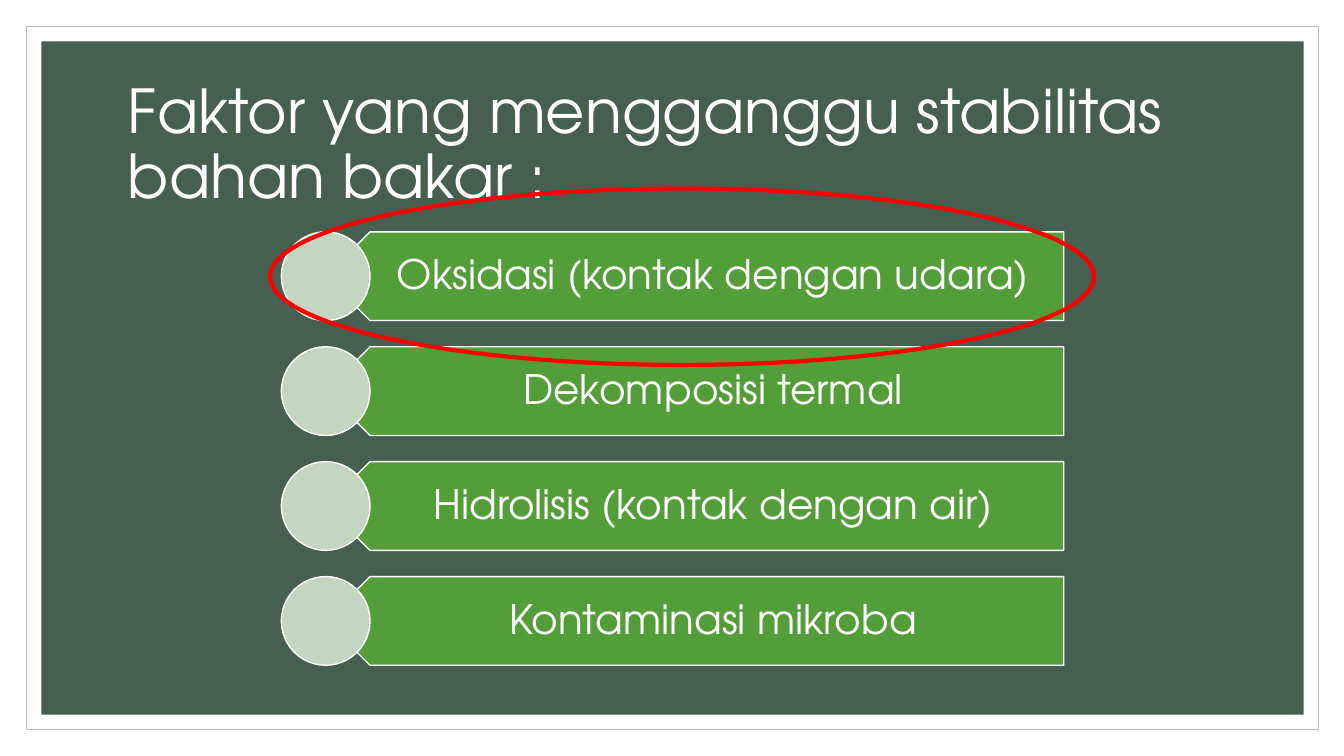
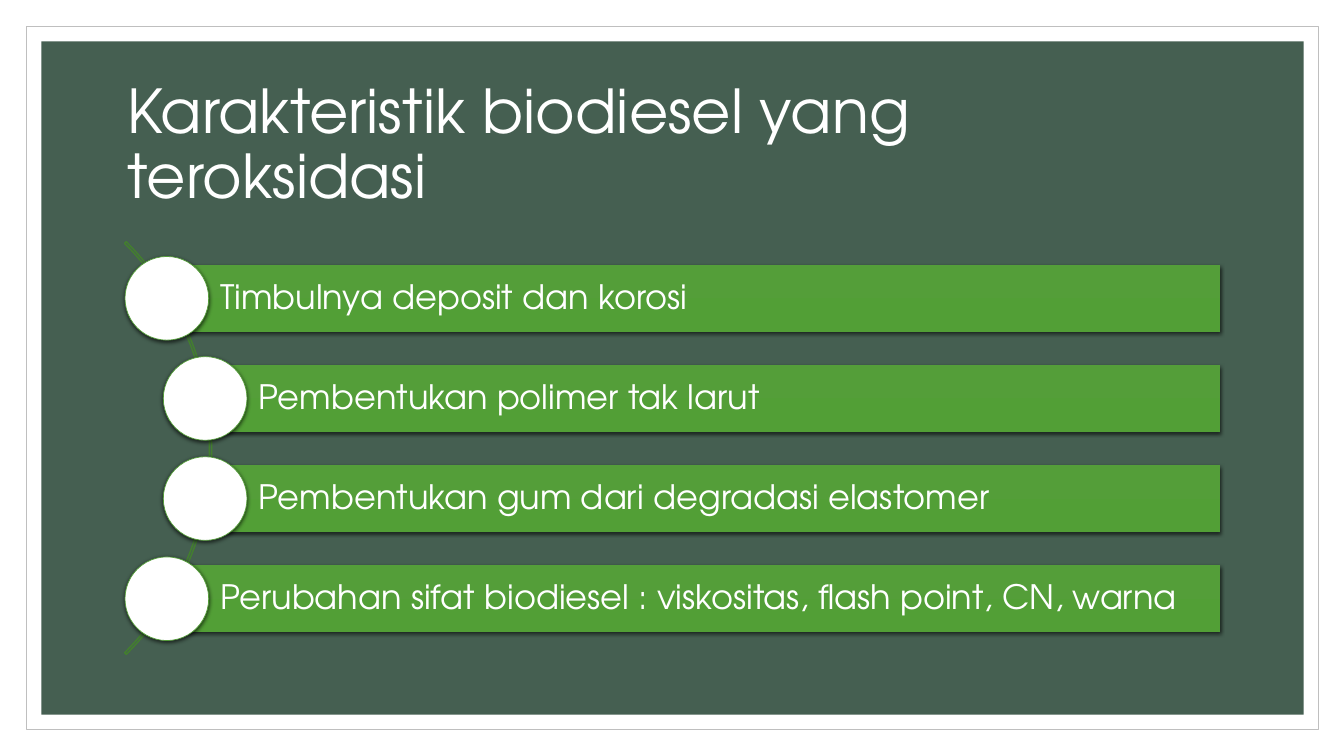
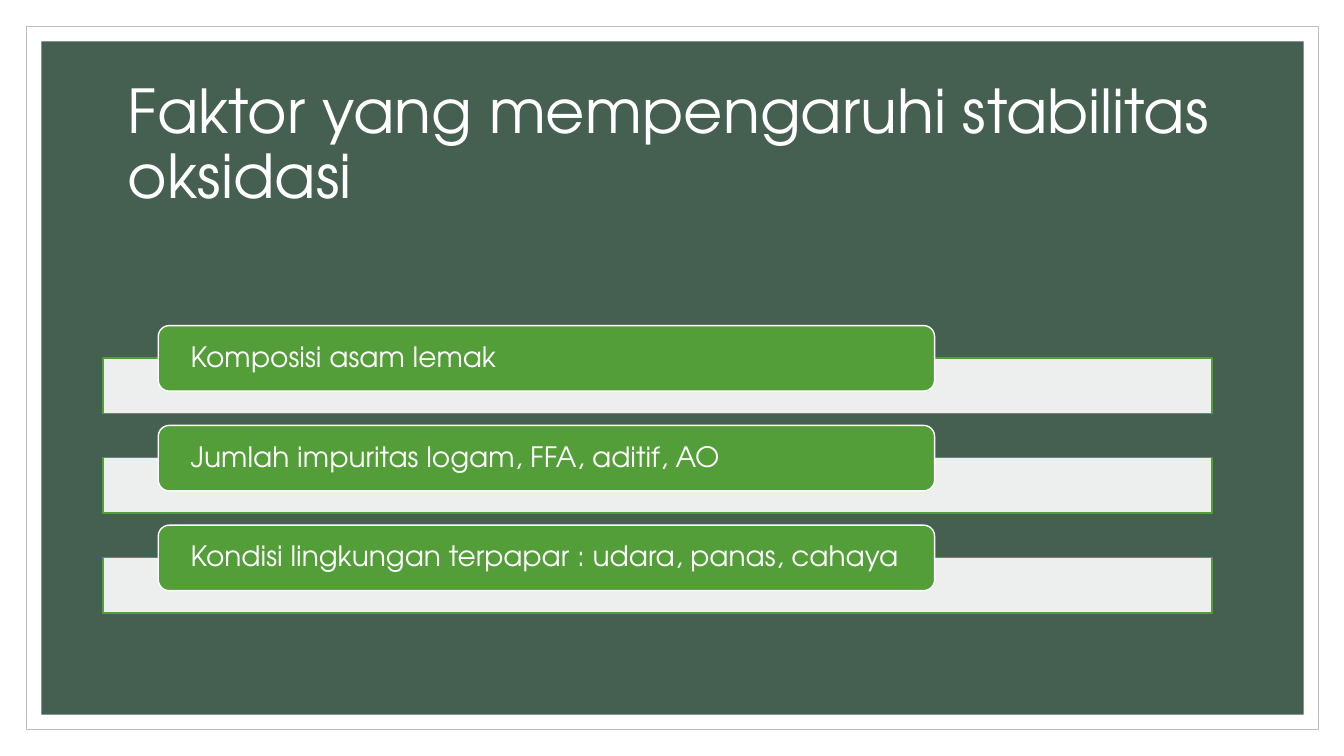
"""Build three slides on the oxidation stability of biodiesel."""
from lxml.etree import SubElement
from pptx import Presentation
from pptx.dml.color import RGBColor
from pptx.enum.shapes import MSO_SHAPE as SHAPE
from pptx.enum.text import MSO_ANCHOR, PP_ALIGN
from pptx.oxml.ns import qn
from pptx.util import Inches, Pt

FONT = "TeX Gyre Adventor"
WHITE, GREEN, PANEL = "FFFFFF", "549E39", "455F51"
SAGE, ARC_GREEN, DEEP_GREEN = "C3D6BF", "437F2E", "529F36"
FRAME_GRAY, RED = "BFBFBF", "FF0000"

DISTURBANCES = (
    "Faktor yang mengganggu stabilitas bahan bakar :",
    [
        "Oksidasi (kontak dengan udara)",
        "Dekomposisi termal",
        "Hidrolisis (kontak dengan air)",
        "Kontaminasi mikroba",
    ],
)
CHARACTERISTICS = (
    "Karakteristik biodiesel yang teroksidasi",
    [
        ("Timbulnya deposit dan korosi", 1.24),
        ("Pembentukan polimer tak larut", 1.62),
        ("Pembentukan gum dari degradasi elastomer", 1.62),
        ("Perubahan sifat biodiesel : viskositas, flash point, CN, warna", 1.24),
    ],
)
INFLUENCES = (
    "Faktor yang mempengaruhi stabilitas oksidasi",
    [
        "Komposisi asam lemak",
        "Jumlah impuritas logam, FFA, aditif, AO",
        "Kondisi lingkungan terpapar : udara, panas, cahaya",
    ],
)


def rgb(value):
    """Turn a hex string into a colour."""
    return RGBColor.from_string(value)


def spread(first, last, count):
    """Return evenly spaced positions from first to last."""
    return [first + (last - first) * i / (count - 1) for i in range(count)]


def add_box(slide, preset, at, fill=None, line=None, width=1):
    """Add a preset shape without a shadow."""
    box = slide.shapes.add_shape(preset, *map(Inches, at))
    box.shadow.inherit = False
    if fill:
        box.fill.solid()
        box.fill.fore_color.rgb = rgb(fill)
    else:
        box.fill.background()
    if line:
        box.line.color.rgb = rgb(line)
        box.line.width = Pt(width)
    else:
        box.line.fill.background()
    return box


def write(box, text, size, insets, align=PP_ALIGN.LEFT):
    """Set one vertically centred white paragraph in a shape."""
    frame = box.text_frame
    frame.word_wrap = True
    frame.vertical_anchor = MSO_ANCHOR.MIDDLE
    frame.margin_left, frame.margin_top, frame.margin_right, frame.margin_bottom = map(Inches, insets)
    paragraph = frame.paragraphs[0]
    paragraph.text = text
    paragraph.alignment = align
    paragraph.line_spacing = 0.9
    paragraph.font.name = FONT
    paragraph.font.size = Pt(size)
    paragraph.font.color.rgb = rgb(WHITE)


def add_alpha(color, percent):
    """Make a colour element partly transparent."""
    SubElement(color, qn("a:alpha"), val=str(percent * 1000))


def cast_shadow(box):
    """Give a shape a soft shadow below it."""
    effects = box.element.spPr.find(qn("a:effectLst"))
    shadow = SubElement(effects, qn("a:outerShdw"), blurRad=str(Pt(3)), dist=str(Pt(1)),
                        dir="5400000", algn="ctr", rotWithShape="0")
    add_alpha(SubElement(shadow, qn("a:srgbClr"), val="000000"), 63)


def shade(box):
    """Fill a shape with the vertical green gradient."""
    box.fill.gradient()
    box.fill.gradient_angle = 270
    for stop, color in zip(box.fill.gradient_stops, (GREEN, DEEP_GREEN)):
        stop.color.rgb = rgb(color)


def add_slide(deck, title):
    """Add a slide with the framed panel and its title."""
    slide = deck.slides.add_slide(deck.slide_layouts[6])
    add_box(slide, SHAPE.RECTANGLE, (0.26, 0.26, 12.82, 6.98), WHITE, FRAME_GRAY, 0.5)
    add_box(slide, SHAPE.RECTANGLE, (0.41, 0.41, 12.52, 6.68), PANEL)
    heading = slide.shapes.add_textbox(*map(Inches, (1.17, 0.7, 11, 1.5)))
    write(heading, title, 43.2, (0.1, 0.05, 0.1, 0.05))
    return slide


def build_disturbances(deck):
    """Draw the arrow list with the first factor circled."""
    title, factors = DISTURBANCES
    slide = add_slide(deck, title)
    height = 0.88
    for factor, top in zip(factors, spread(2.3, 5.72, len(factors))):
        arrow = add_box(slide, SHAPE.PENTAGON, (3.23, top, 7.32, height), GREEN, WHITE)
        arrow.rotation = 180
        label = slide.shapes.add_textbox(*map(Inches, (3.45, top, 7.09, height)))
        write(label, factor, 29, (0.39, 0.12, 0.23, 0.12), PP_ALIGN.CENTER)
        add_box(slide, SHAPE.OVAL, (2.79, top, height, height), SAGE, WHITE)
    add_box(slide, SHAPE.OVAL, (2.68, 1.87, 8.17, 1.75), line=RED, width=3)


def build_characteristics(deck):
    """Draw the bars whose circles follow an arc."""
    title, traits = CHARACTERISTICS
    slide = add_slide(deck, title)
    arc = add_box(slide, SHAPE.BLOCK_ARC, (-3.69, 1.55, 5.79, 5.79), line=ARC_GREEN)
    for i, value in enumerate((189, 27, 0.004)):
        arc.adjustments[i] = value
    height, diameter, right = 0.66, 0.83, 12.1
    for (trait, left), top in zip(traits, spread(2.63, 5.61, len(traits))):
        center = left + diameter / 2
        bar = add_box(slide, SHAPE.RECTANGLE, (center, top, right - center, height), GREEN)
        shade(bar)
        write(bar, trait, 24, (0.53, 0.07, 0.07, 0.07))
        circle_top = top + (height - diameter) / 2
        circle = add_box(slide, SHAPE.OVAL, (left, circle_top, diameter, diameter), WHITE, GREEN, 0.5)
        cast_shadow(bar)
        cast_shadow(circle)


def build_influences(deck):
    """Draw the rounded labels over pale strips."""
    title, factors = INFLUENCES
    slide = add_slide(deck, title)
    for factor, top in zip(factors, spread(3.23, 5.21, len(factors))):
        strip = add_box(slide, SHAPE.RECTANGLE, (1.02, top + 0.32, 11, 0.55), WHITE, GREEN)
        add_alpha(strip.element.spPr.find(qn("a:solidFill"))[0], 90)
        label = add_box(slide, SHAPE.ROUNDED_RECTANGLE, (1.57, top, 7.7, 0.65), GREEN, WHITE)
        write(label, factor, 20, (0.29, 0, 0.29, 0))


def main():
    """Build and save the deck."""
    deck = Presentation()
    deck.slide_width, deck.slide_height = Inches(13.33), Inches(7.5)
    build_disturbances(deck)
    build_characteristics(deck)
    build_influences(deck)
    deck.save("out.pptx")


if __name__ == "__main__":
    main()
